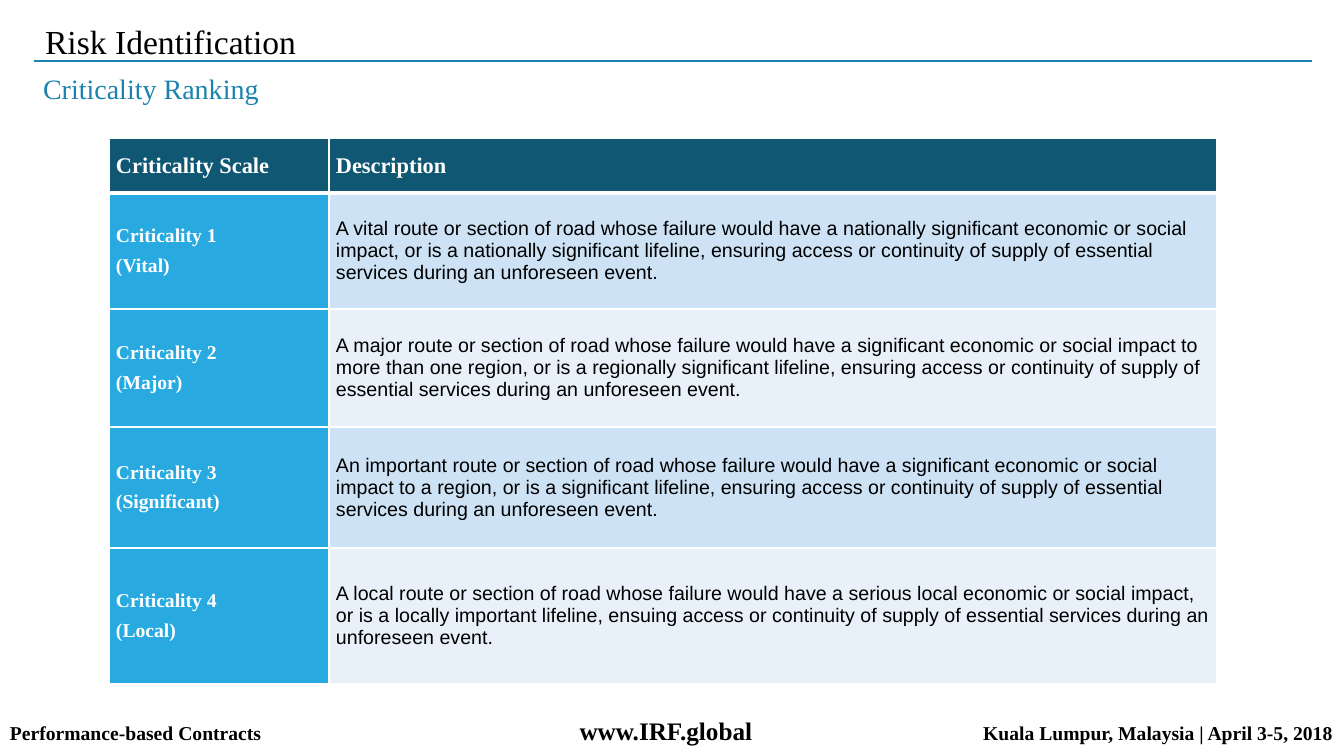
from lxml.etree import SubElement as Sub
from pptx import Presentation
from pptx.dml.color import RGBColor
from pptx.enum.shapes import MSO_CONNECTOR as Conn
from pptx.enum.text import MSO_ANCHOR as Anchor, PP_ALIGN as Align
from pptx.oxml.ns import qn
from pptx.util import Emu, Pt

WIDE, HIGH = 1344, 756
SERIF, SANS = "Times New Roman", "Arial"
BLACK, WHITE, TEAL = "000000", "FFFFFF", "1982AF"
NAVY, SKY = "105774", "28AAE1"
BANDS = ["CDE2F4", "E8F1F9"]

RANKS = [
    ("Criticality 1\n(Vital)",
     "A vital route or section of road whose failure would have a nationally "
     "significant economic or social impact, or is a nationally significant "
     "lifeline, ensuring access or continuity of supply of essential services "
     "during an unforeseen event."),
    ("Criticality 2\n(Major)",
     "A major route or section of road whose failure would have a significant "
     "economic or social impact to more than one region, or is a regionally "
     "significant lifeline, ensuring access or continuity of supply of "
     "essential services during an unforeseen event."),
    ("Criticality 3\n(Significant)",
     "An important route or section of road whose failure would have a "
     "significant economic or social impact to a region, or is a significant "
     "lifeline, ensuring access or continuity of supply of essential services "
     "during an unforeseen event."),
    ("Criticality 4\n(Local)",
     "A local route or section of road whose failure would have a serious "
     "local economic or social impact, or is a locally important lifeline, "
     "ensuing access or continuity of supply of essential services during an "
     "unforeseen event."),
]


def px(num):
    return Emu(round(num * 12192000 / WIDE))


def color(code):
    return RGBColor.from_string(code)


class Deck:
    def __init__(self):
        self.file = Presentation()
        self.file.slide_width = px(WIDE)
        self.file.slide_height = px(HIGH)
        self.slide = self.file.slides.add_slide(self.file.slide_layouts[5])
        self.shapes = self.slide.shapes

    def style(self, run, size, code, bold=False, face=SERIF):
        font = run.font
        font.name, font.size, font.bold = face, Pt(size), bold
        font.color.rgb = color(code)

    def place(self, shape, left, top, wide, high):
        shape.left, shape.top = px(left), px(top)
        shape.width, shape.height = px(wide), px(high)

    def head(self, text, size, code, frame, anchor):
        frame.text = text
        frame.word_wrap = True
        frame.vertical_anchor = anchor
        para = frame.paragraphs[0]
        para.alignment = Align.LEFT
        para.line_spacing = 0.85
        self.style(para.runs[0], size, code)

    def title(self, text, *area):
        shape = self.shapes.title
        self.place(shape, *area)
        self.head(text, 24, BLACK, shape.text_frame, Anchor.MIDDLE)

    def lead(self, text, *area):
        frame = self.shapes.add_textbox(*map(px, area)).text_frame
        frame.margin_left = px(8)
        self.head(text, 20, TEAL, frame, Anchor.TOP)

    def rule(self, left, right, top):
        line = self.shapes.add_connector(
            Conn.STRAIGHT, px(left), px(top), px(right), px(top))
        line.line.color.rgb = color(TEAL)
        line.line.width = Pt(1.5)
        Sub(line._element.spPr, qn("a:effectLst"))

    def foot(self, parts, tabs, *area):
        frame = self.shapes.add_textbox(*map(px, area)).text_frame
        frame.word_wrap = True
        para = frame.paragraphs[0]
        stops = Sub(para._p.get_or_add_pPr(), qn("a:tabLst"))
        for spot, kind in tabs:
            Sub(stops, qn("a:tab"), pos=str(px(spot)), algn=kind)
        for text, size in parts:
            run = para.add_run()
            run.text = text
            self.style(run, size, BLACK, True)

    def cell(self, cell, text, fill, size, code, bold, face, base):
        cell.text_frame.text = text
        cell.vertical_anchor = Anchor.MIDDLE
        cell.margin_left = cell.margin_right = px(7)
        cell.margin_top = cell.margin_bottom = 0
        for para in cell.text_frame.paragraphs:
            self.style(para.runs[0], size, code, bold, face)
        for para in cell.text_frame.paragraphs[1:]:
            para.space_before = Pt(5.8)
        props = cell._tc.get_or_add_tcPr()
        for side, wide in zip("LRTB", (1, 1, 1, base)):
            edge = Sub(props, qn(f"a:ln{side}"), w=str(Pt(wide)))
            Sub(Sub(edge, qn("a:solidFill")), qn("a:srgbClr"), val=WHITE)
        cell.fill.solid()
        cell.fill.fore_color.rgb = color(fill)

    def table(self, left, top, cols, rows):
        grid = self.shapes.add_table(
            len(rows), len(cols), px(left), px(top),
            px(sum(cols)), px(sum(rows))).table
        grid.horz_banding = False
        for col, wide in zip(grid.columns, cols):
            col.width = px(wide)
        for row, high in zip(grid.rows, rows):
            row.height = px(high)
        for col, text in enumerate(("Criticality Scale", "Description")):
            self.cell(grid.cell(0, col), text, NAVY, 16, WHITE, True, SERIF, 3)
        for row, (rank, text) in enumerate(RANKS, 1):
            band = BANDS[(row - 1) % 2]
            self.cell(grid.cell(row, 0), rank, SKY, 14, WHITE, True, SERIF, 1)
            self.cell(grid.cell(row, 1), text, band, 14, BLACK, False, SANS, 1)


def main():
    deck = Deck()
    deck.rule(34, 1312, 61)
    deck.foot(
        [("Performance-based Contracts\t", 14), ("www.IRF.global", 18),
         ("\tKuala Lumpur, Malaysia | April 3-5, 2018", 14)],
        [(656, "ctr"), (1323, "r")], 0, 710, WIDE, 40)
    deck.title("Risk Identification", 35, 18, 881, 53)
    deck.lead("Criticality Ranking", 35, 72, 1276, 54)
    deck.table(109, 138, [220, 888], [55, 116, 118, 121, 136])
    deck.file.save("out.pptx")


if __name__ == "__main__":
    main()
